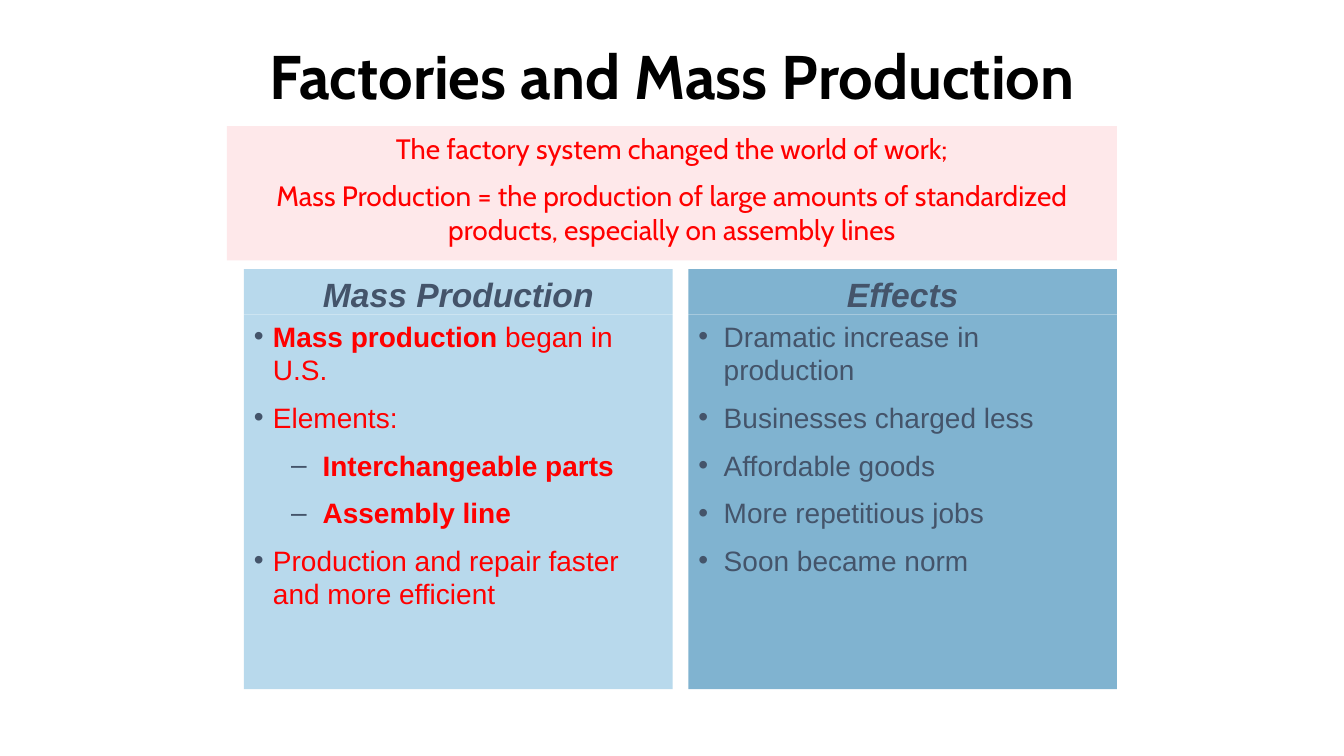
from dataclasses import dataclass

from lxml.etree import SubElement
from pptx import Presentation
from pptx.dml.color import RGBColor
from pptx.enum.shapes import MSO_SHAPE
from pptx.enum.text import MSO_ANCHOR, MSO_AUTO_SIZE, PP_ALIGN
from pptx.oxml.ns import qn
from pptx.shapes.autoshape import Shape
from pptx.shapes.shapetree import GroupShapes, SlideShapes
from pptx.text.text import TextFrame
from pptx.util import Cm, Pt


@dataclass(frozen=True)
class Theme:
    black: str = "000000"
    red: str = "FF0000"
    slate: str = "44546A"
    pink: str = "FEE8EA"
    pale: str = "B8D9EC"
    blue: str = "80B3D0"
    display: str = "Cabin"
    plain: str = "Arial"
    title: int = 44
    head: int = 24
    body: int = 20
    gap: int = 10


@dataclass(frozen=True)
class Bullet:
    mark: str
    level: int
    margin: float
    hang: float


@dataclass(frozen=True)
class Item:
    text: str
    strong: str = ""
    bullet: Bullet | None = None


@dataclass(frozen=True)
class Panel:
    head: str
    fill: str
    ink: str
    items: list[Item]


@dataclass(frozen=True)
class Box:
    left: float
    top: float
    width: float
    height: float


THEME = Theme()
DOT = Bullet("•", 0, 0.48, 0.48)
DASH = Bullet("–", 1, 1.73, 0.79)
WIDE = Bullet("•", 0, 0.64, 0.64)

PANELS = [
    Panel("Mass Production", THEME.pale, THEME.red, [
        Item(" began in U.S.", "Mass production", DOT),
        Item("Elements:", bullet=DOT),
        Item("", "Interchangeable parts", DASH),
        Item("", "Assembly line", DASH),
        Item("Production and repair faster and more efficient", bullet=DOT),
    ]),
    Panel("Effects", THEME.blue, THEME.slate, [
        Item("Dramatic increase in production", bullet=WIDE),
        Item("Businesses charged less", bullet=WIDE),
        Item("Affordable goods", bullet=WIDE),
        Item("More repetitious jobs", bullet=WIDE),
        Item("Soon became norm", bullet=WIDE),
    ]),
]

BANNER = [
    Item("The factory system changed the world of work;"),
    Item("Mass Production = the production of large amounts of "
         "standardized products, especially on assembly lines"),
]

LEFT, WIDTH, PITCH = 6.15, 10.8, 11.2
TOP, HEAD, BODY = 6.78, 1.14, 9.45


def write(frame: TextFrame, items: list[Item], *, font: str = THEME.plain,
          size: int = THEME.body, ink: str = THEME.slate, italic: bool = False,
          align: PP_ALIGN = PP_ALIGN.CENTER) -> None:
    frame.word_wrap = True
    frame.auto_size = MSO_AUTO_SIZE.NONE
    frame.vertical_anchor = MSO_ANCHOR.TOP
    for index, item in enumerate(items):
        para = frame.add_paragraph() if index else frame.paragraphs[0]
        para.alignment = align
        para.space_before = Pt(THEME.gap if index else 0)
        if item.bullet:
            para.level = item.bullet.level
            props = para._p.get_or_add_pPr()
            props.set("marL", str(Cm(item.bullet.margin)))
            props.set("indent", str(-Cm(item.bullet.hang)))
            tint = SubElement(props, qn("a:buClr"))
            SubElement(tint, qn("a:srgbClr"), val=THEME.slate)
            SubElement(props, qn("a:buFont"), typeface=THEME.plain)
            SubElement(props, qn("a:buChar"), char=item.bullet.mark)
        for text, bold in ((item.strong, True), (item.text, False)):
            if text:
                run = para.add_run()
                run.text = text
                run.font.name = font
                run.font.size = Pt(size)
                run.font.bold = bold
                run.font.italic = italic
                run.font.color.rgb = RGBColor.from_string(ink)


def block(shapes: SlideShapes | GroupShapes, box: Box, fill: str) -> Shape:
    shape = shapes.add_shape(MSO_SHAPE.RECTANGLE, Cm(box.left), Cm(box.top),
                             Cm(box.width), Cm(box.height))
    shape.shadow.inherit = False
    shape.fill.solid()
    shape.fill.fore_color.rgb = RGBColor.from_string(fill)
    shape.line.fill.background()
    return shape


def column(shapes: SlideShapes, panel: Panel, left: float) -> None:
    group = shapes.add_group_shape().shapes
    body = block(group, Box(left, TOP + HEAD, WIDTH, BODY), panel.fill)
    write(body.text_frame, panel.items, ink=panel.ink, align=PP_ALIGN.LEFT)
    head = block(group, Box(left, TOP, WIDTH, HEAD), panel.fill)
    write(head.text_frame, [Item("", panel.head)], size=THEME.head, italic=True)


def main() -> None:
    deck = Presentation()
    deck.slide_width, deck.slide_height = Cm(33.87), Cm(19.05)
    slide = deck.slides.add_slide(deck.slide_layouts[5])

    title = slide.shapes.title
    title.left, title.top = Cm(4.24), Cm(0.84)
    title.width, title.height = Cm(25.4), Cm(1.47)
    write(title.text_frame, [Item("", "Factories and Mass Production")],
          font=THEME.display, size=THEME.title, ink=THEME.black)

    banner = block(slide.shapes, Box(5.72, 3.18, 22.43, 3.38), THEME.pink)
    write(banner.text_frame, BANNER, font=THEME.display, ink=THEME.red)

    for index, panel in enumerate(PANELS):
        column(slide.shapes, panel, LEFT + index * PITCH)

    deck.save("out.pptx")


if __name__ == "__main__":
    main()
